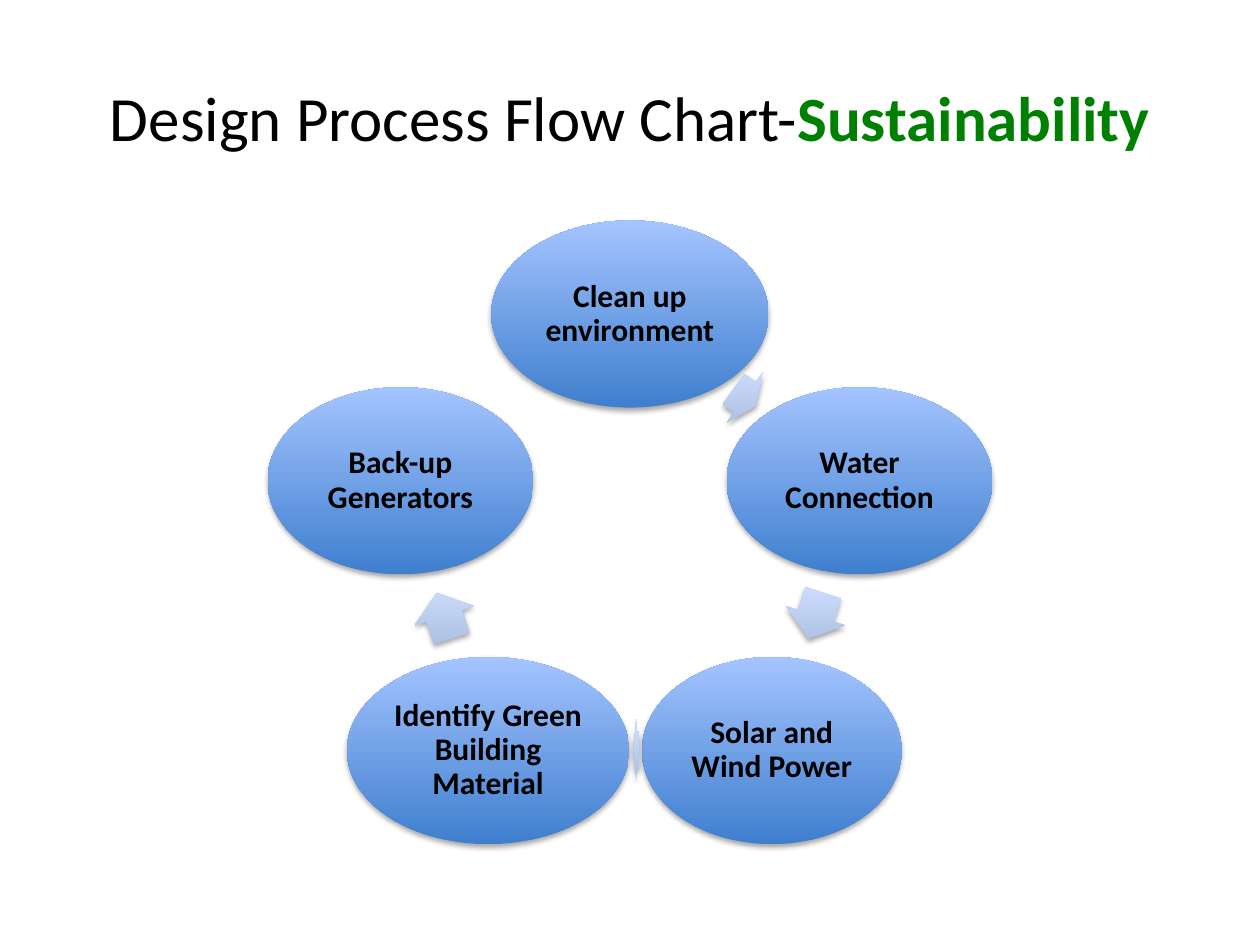
import math
import lxml.etree
import pptx
import pptx.dml.color
import pptx.enum.shapes
import pptx.enum.text
import pptx.oxml.ns
import pptx.util

RGB = pptx.dml.color.RGBColor
KIND = pptx.enum.shapes.MSO_SHAPE
MIDDLE = pptx.enum.text.MSO_ANCHOR.MIDDLE
CENTER = pptx.enum.text.PP_ALIGN.CENTER
Pt, Inches = pptx.util.Pt, pptx.util.Inches

BLACK = RGB(0, 0, 0)
WHITE = RGB(255, 255, 255)
GREEN = RGB(0, 128, 0)
NODE = (RGB(0x3F, 0x7F, 0xCE), RGB(0xA4, 0xC4, 0xFF))
ARROW = (RGB(0xAD, 0xBF, 0xE1), RGB(0xCC, 0xDD, 0xFF))
HIDDEN = (WHITE,)

STEPS = (
    ("Clean up environment", 2.2, 0.22, 0, ARROW),
    ("Water Connection", 2.11, 0.38, 0, ARROW),
    ("Solar and Wind Power", 2.06, 0.05, 0.05, ARROW),
    ("Identify Green Building Material", 2.24, 0.38, 0, ARROW),
    ("Back-up Generators", 2.11, 0.22, 0, HIDDEN),
)


def style(item, **values):
    """Set each given format value on the item."""
    for name, value in values.items():
        setattr(item, name, value)


def write(para, text, size, color, bold):
    """Add one formatted run to a paragraph."""
    run = para.add_run()
    run.text = text
    style(run.font, name="Calibri", size=Pt(size), bold=bold)
    run.font.color.rgb = color


def shade(shape):
    """Give a shape a soft shadow that falls straight down."""
    qn = pptx.oxml.ns.qn
    effect = shape._element.spPr.find(qn("a:effectLst"))
    outer = lxml.etree.SubElement(effect, qn("a:outerShdw"), {
        "blurRad": str(Pt(3.1)), "dist": str(Pt(1.8)),
        "dir": "5400000", "rotWithShape": "0"})
    tint = lxml.etree.SubElement(outer, qn("a:srgbClr"), val="000000")
    lxml.etree.SubElement(tint, qn("a:alpha"), val="35000")


def paint(shape, colors):
    """Fill a shape with one plain colour or an upward gradient."""
    shape.line.fill.background()
    shape.shadow.inherit = False
    if len(colors) == 1:
        shape.fill.solid()
        shape.fill.fore_color.rgb = colors[0]
        return
    shape.fill.gradient()
    shape.fill.gradient_angle = 90
    for stop, color in zip(shape.fill.gradient_stops, colors):
        stop.color.rgb = color
    grad = shape._element.spPr.find(pptx.oxml.ns.qn("a:gradFill"))
    grad.set("rotWithShape", "0")
    shade(shape)


def place(group, kind, mid, size, colors):
    """Add a painted shape centred on a point."""
    x, y = mid
    wide, high = size
    box = (x - wide / 2, y - high / 2, wide, high)
    shape = group.shapes.add_shape(kind, *map(Inches, box))
    paint(shape, colors)
    return shape


def label(shape, text):
    """Write a step's name in the middle of its shape."""
    frame = shape.text_frame
    edge = Inches(0.03)
    style(frame, word_wrap=True, vertical_anchor=MIDDLE, margin_left=edge,
          margin_right=edge, margin_top=edge, margin_bottom=edge)
    para = frame.paragraphs[0]
    style(para, alignment=CENTER, line_spacing=0.9)
    write(para, text, 18, BLACK, True)


def polar(mid, reach, turn):
    """Find the point at a clockwise turn from the top of a ring."""
    angle = math.radians(turn)
    return mid[0] + reach * math.sin(angle), mid[1] - reach * math.cos(angle)


def cycle(slide, box, steps):
    """Set the steps around a ring in the box, with arrows between them."""
    left, top, wide, high = box
    node = 0.3 * high
    turn = 360 / len(steps)
    half = math.radians(turn / 2)
    reach = (high - node) / (1 + math.cos(half))
    mid = (left + wide / 2, top + node / 2 + reach)
    group = slide.shapes.add_group_shape()
    for i, (text, width, length, shift, colors) in enumerate(steps):
        spot = polar(mid, reach, i * turn)
        label(place(group, KIND.OVAL, spot, (width, node), NODE), text)
        angle = (i + 0.5) * turn
        x, y = polar(mid, reach * math.cos(half), angle)
        arrow = place(group, KIND.RIGHT_ARROW, (x + shift, y),
                      (length, node / 3), colors)
        arrow.rotation = angle
        arrow.adjustments[0] = 0.6
        arrow.adjustments[1] = 0.5


def head(slide, box):
    """Fill the title and move it into the box."""
    title = slide.shapes.title
    left, top, wide, high = map(Inches, box)
    style(title, left=left, top=top, width=wide, height=high)
    style(title.text_frame, vertical_anchor=MIDDLE, word_wrap=True)
    para = title.text_frame.paragraphs[0]
    para.alignment = CENTER
    write(para, "Design Process Flow Chart-", 36, BLACK, False)
    write(para, "Sustainability", 36, GREEN, True)


def main():
    """Build the slide and save it."""
    deck = pptx.Presentation()
    style(deck, slide_width=Inches(10), slide_height=Inches(7.5))
    slide = deck.slides.add_slide(deck.slide_layouts[5])
    head(slide, (0.5, 0.3, 9, 1.25))
    cycle(slide, (2, 1.75, 6, 4.95), STEPS)
    deck.save("out.pptx")


if __name__ == "__main__":
    main()
